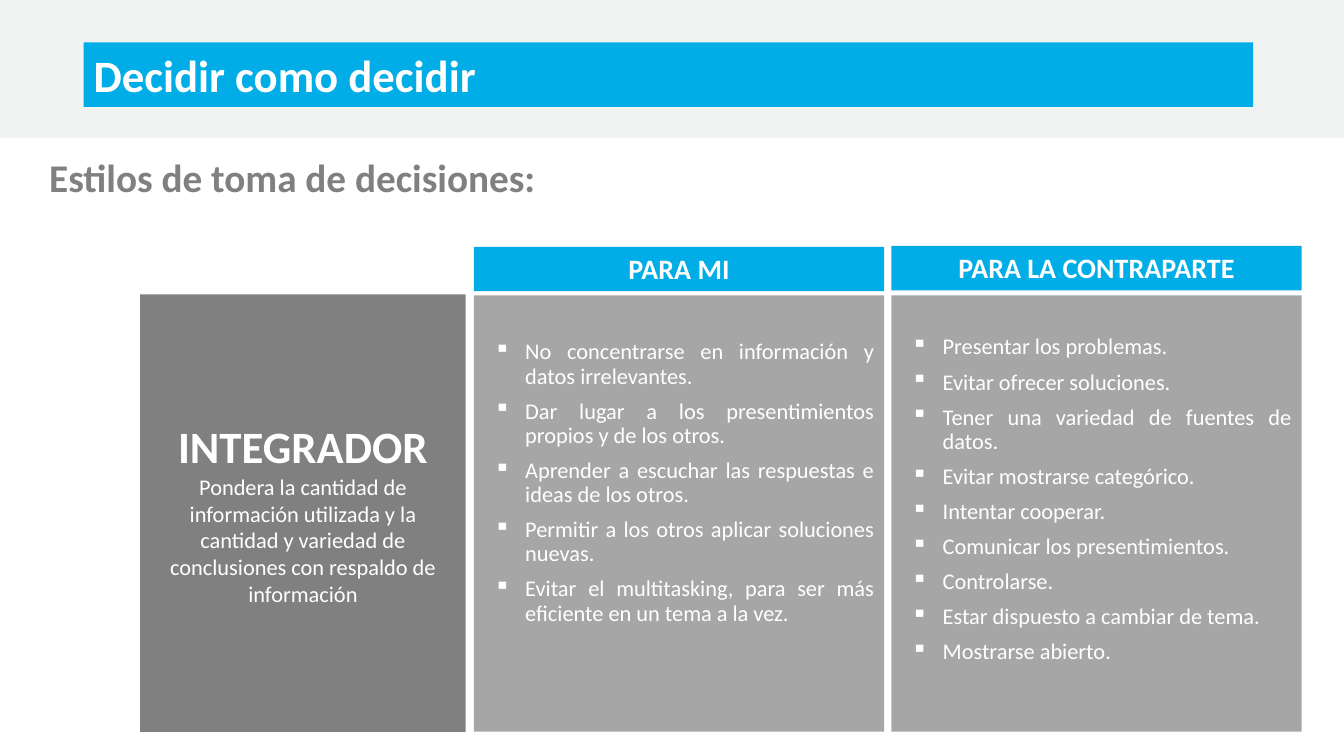
from lxml.etree import SubElement
from pptx import Presentation
from pptx.dml.color import RGBColor
from pptx.enum.shapes import MSO_SHAPE
from pptx.enum.text import MSO_ANCHOR, PP_ALIGN
from pptx.oxml.ns import qn
from pptx.util import Inches, Pt

TITLE = "Decidir como decidir"
SUBTITLE = "Estilos de toma de decisiones:"
STYLE = "INTEGRADOR"
STYLE_TEXT = ("Pondera la cantidad de información utilizada y la cantidad y variedad "
              "de conclusiones con respaldo de información")
COLUMNS = [
    {"heading": "PARA MI", "heading_top": 2.45, "inset_top": 0.45, "advice": [
        "No concentrarse en información y datos irrelevantes.",
        "Dar lugar a los presentimientos propios y de los otros.",
        "Aprender a escuchar las respuestas e ideas de los otros.",
        "Permitir a los otros aplicar soluciones nuevas.",
        "Evitar el multitasking, para ser más eficiente en un tema a la vez.",
    ]},
    {"heading": "PARA LA CONTRAPARTE", "heading_top": 2.44, "inset_top": 0.4, "advice": [
        "Presentar los problemas.",
        "Evitar ofrecer soluciones.",
        "Tener una variedad de fuentes de datos.",
        "Evitar mostrarse categórico.",
        "Intentar cooperar.",
        "Comunicar los presentimientos.",
        "Controlarse.",
        "Estar dispuesto a cambiar de tema.",
        "Mostrarse abierto.",
    ]},
]
WHITE, BLUE, GRAY, LIGHT_GRAY, BAND = "FFFFFF", "00ADE6", "808080", "A6A6A6", "F1F3F2"
COLUMN_LEFT, COLUMN_PITCH, COLUMN_WIDTH = 4.7, 4.14, 4.07
INDENT = 0.31


def rgb(color):
    return RGBColor.from_string(color)


def add_panel(left, top, width, height, color, anchor=MSO_ANCHOR.TOP):
    panel = slide.shapes.add_shape(
        MSO_SHAPE.RECTANGLE, Inches(left), Inches(top), Inches(width), Inches(height))
    panel.shadow.inherit = False
    panel.fill.solid()
    panel.fill.fore_color.rgb = rgb(color)
    panel.line.fill.background()
    panel.text_frame.word_wrap = True
    panel.text_frame.vertical_anchor = anchor
    return panel


def write(frame, text, size, align, bold=False, color=WHITE, bullet=False):
    first = not frame.text
    paragraph = frame.paragraphs[0] if first else frame.add_paragraph()
    paragraph.text = text
    paragraph.alignment = align
    if bullet:
        paragraph.line_spacing = 0.9
        paragraph.space_before = Pt(0 if first else 7.8)
        properties = paragraph._p.get_or_add_pPr()
        properties.set("marL", str(Inches(INDENT)))
        properties.set("indent", str(-Inches(INDENT)))
        bullet_color = SubElement(properties, qn("a:buClr"))
        SubElement(bullet_color, qn("a:srgbClr"), val=WHITE)
        SubElement(properties, qn("a:buChar"), char="▪")
    paragraph.font.name = "Calibri"
    paragraph.font.size = Pt(size)
    paragraph.font.bold = bold
    paragraph.font.color.rgb = rgb(color)
    return paragraph


deck = Presentation()
deck.slide_width, deck.slide_height = Inches(13.33), Inches(7.5)
slide = deck.slides.add_slide(deck.slide_layouts[6])

band = add_panel(0, 0, 13.33, 1.36, BAND)
band.line.color.rgb = rgb(BAND)
band.line.width = Pt(1)

title = add_panel(0.83, 0.42, 11.6, 0.64, BLUE)
write(title.text_frame, TITLE, 32, PP_ALIGN.JUSTIFY, bold=True)

subtitle = slide.shapes.add_textbox(Inches(0.39), Inches(1.39), Inches(12.47), Inches(0.76))
subtitle.text_frame.word_wrap = True
subtitle.text_frame.vertical_anchor = MSO_ANCHOR.MIDDLE
write(subtitle.text_frame, SUBTITLE, 28, PP_ALIGN.LEFT, bold=True, color=GRAY).line_spacing = Pt(32)

style = add_panel(1.39, 2.92, 3.23, 4.34, GRAY, MSO_ANCHOR.MIDDLE)
write(style.text_frame, STYLE, 32, PP_ALIGN.CENTER, bold=True)
write(style.text_frame, STYLE_TEXT, 16, PP_ALIGN.CENTER)

for index, column in enumerate(COLUMNS):
    left = COLUMN_LEFT + index * COLUMN_PITCH
    heading = add_panel(left, column["heading_top"], COLUMN_WIDTH, 0.44, BLUE)
    write(heading.text_frame, column["heading"], 20, PP_ALIGN.CENTER, bold=True)
    body = add_panel(left, 2.93, COLUMN_WIDTH, 4.33, LIGHT_GRAY).text_frame
    body.margin_left = Inches(0.2)
    body.margin_top = Inches(column["inset_top"])
    for advice in column["advice"]:
        write(body, advice, 16, PP_ALIGN.JUSTIFY, bullet=True)

deck.save("out.pptx")
